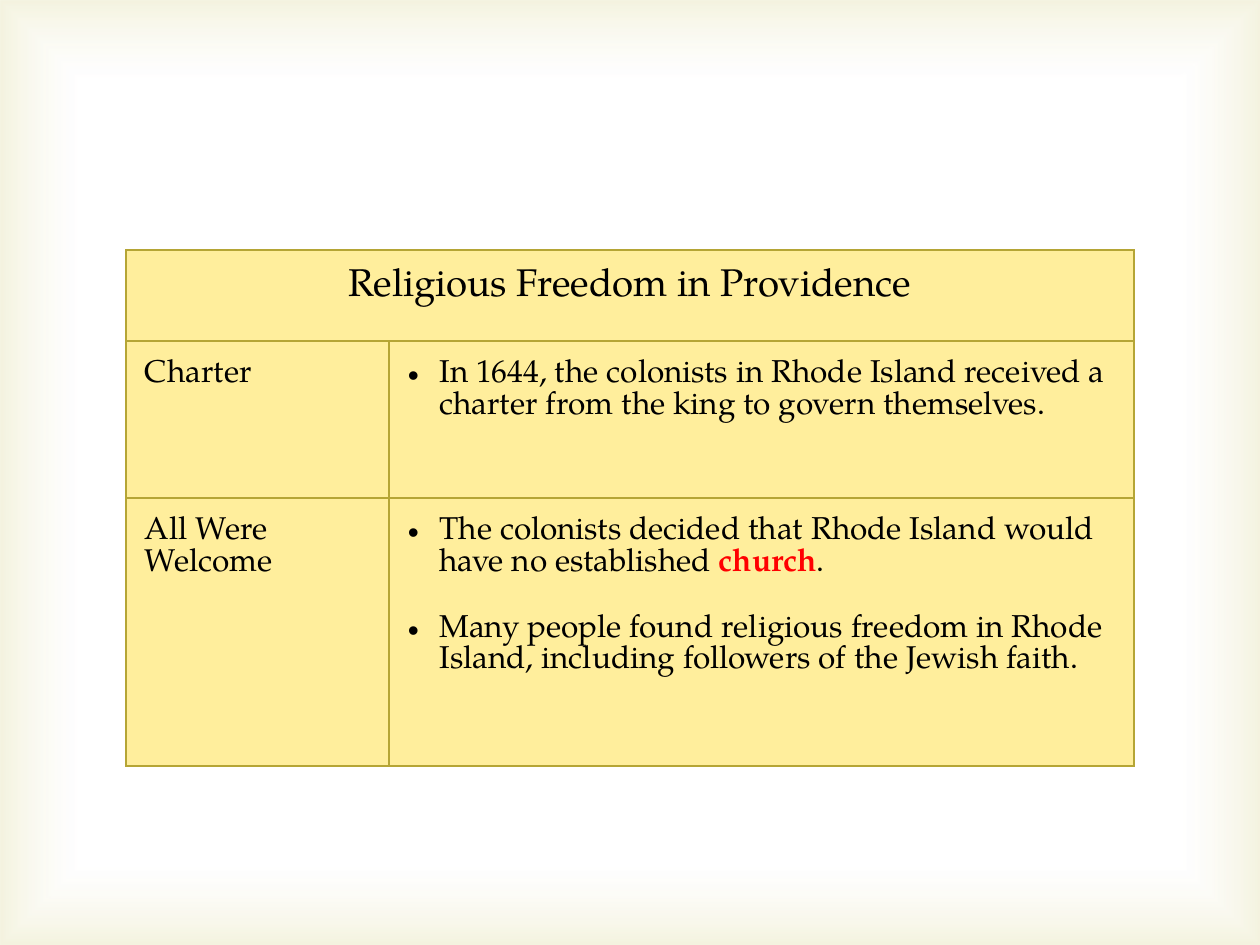
import lxml.etree
import pptx
import pptx.dml.color
import pptx.enum.shapes
import pptx.enum.text
import pptx.oxml
import pptx.oxml.ns
import pptx.util

PX = 914400 // 126
WIDTH, HEIGHT = 1260, 945
FONT = "TeX Gyre Pagella"
BLACK, RED, CREAM, GOLD = "000000", "FF0000", "FFEE9C", "B5A535"
COLUMNS = [263, 745]
ROWS = [91, 157, 268]
TITLE = "Religious Freedom in Providence"
TOPICS = [
    ("Charter", [
        ["In 1644, the colonists in Rhode Island received a charter from the king to govern themselves."],
    ]),
    ("All Were Welcome", [
        ["The colonists decided that Rhode Island would have no established ", "church", "."],
        ["Many people found religious freedom in Rhode Island, including followers of the Jewish faith."],
    ]),
]
KEYWORDS = {"church"}


def px(length):
    """Turn px into EMU."""
    return pptx.util.Emu(length * PX)


def rgb(color):
    """Turn a hex string into a colour."""
    return pptx.dml.color.RGBColor.from_string(color)


def element(markup):
    """Parse one DrawingML element."""
    head, tail = markup.split(">", 1)
    slash = "/" if head.endswith("/") else ""
    head = head.rstrip("/")
    return pptx.oxml.parse_xml(f"{head} {pptx.oxml.ns.nsdecls('a')}{slash}>{tail}")


def add_vignette(page, left, top, width, height):
    """Tint the edges of the page with a rectangular gradient."""
    box = page.shapes.add_shape(
        pptx.enum.shapes.MSO_SHAPE.RECTANGLE, px(left), px(top), px(width), px(height))
    box.shadow.inherit = False
    box.line.fill.background()
    stops = "".join(
        f'<a:gs pos="{place}000"><a:srgbClr val="{color}"><a:alpha val="{alpha}000"/></a:srgbClr></a:gs>'
        for place, color, alpha in [(83, "FFFFFF", 11), (100, "D1CA75", 23)])
    gradient = element(
        f'<a:gradFill><a:gsLst>{stops}</a:gsLst><a:path path="rect">'
        '<a:fillToRect l="50000" t="50000" r="50000" b="50000"/></a:path></a:gradFill>')
    box.element.spPr.find(pptx.oxml.ns.qn("a:prstGeom")).addnext(gradient)


def style_cell(cell):
    """Give a cell its margins, borders and fill."""
    cell.margin_left = cell.margin_right = cell.margin_top = cell.margin_bottom = px(19)
    cell.fill.solid()
    cell.fill.fore_color.rgb = rgb(CREAM)
    properties = cell._tc.get_or_add_tcPr()
    for index, side in enumerate("LRTB"):
        properties.insert(index, element(
            f'<a:ln{side} w="12700"><a:solidFill><a:srgbClr val="{GOLD}"/></a:solidFill></a:ln{side}>'))


def write_cell(cell, paragraphs, size, bullet=False, centred=False):
    """Write paragraphs, each a list of spans, into a cell."""
    for index, spans in enumerate(paragraphs):
        para = cell.text_frame.add_paragraph() if index else cell.text_frame.paragraphs[0]
        para.line_spacing = pptx.util.Pt(size)
        if centred:
            para.alignment = pptx.enum.text.PP_ALIGN.CENTER
        if index:
            para.space_before = pptx.util.Pt(size * 0.5)
        if bullet:
            para.space_after = pptx.util.Pt(size * 0.6)
            properties = para._p.get_or_add_pPr()
            properties.set("marL", "228600")
            properties.set("indent", "-228600")
            properties.append(element('<a:buFont typeface="Arial"/>'))
            properties.append(element('<a:buChar char="•"/>'))
        para.font.name = FONT
        para.font.size = pptx.util.Pt(size)
        para.font.color.rgb = rgb(BLACK)
        for text in spans:
            span = para.add_run()
            span.text = text
            if text in KEYWORDS:
                span.font.bold = True
                span.font.color.rgb = rgb(RED)


def add_freedom_table(page, left, top):
    """Place the table with a title row and one row for each topic."""
    table = page.shapes.add_table(
        len(ROWS), len(COLUMNS), px(left), px(top), px(sum(COLUMNS)), px(sum(ROWS))).table
    table.first_row = table.horz_banding = False
    for column, width in zip(table.columns, COLUMNS):
        column.width = px(width)
    for row, height in zip(table.rows, ROWS):
        row.height = px(height)
    for cell in table.iter_cells():
        style_cell(cell)
    table.cell(0, 0).merge(table.cell(0, 1))
    write_cell(table.cell(0, 0), [[TITLE]], 22, centred=True)
    for row, (topic, points) in enumerate(TOPICS, 1):
        write_cell(table.cell(row, 0), [[topic]], 18)
        write_cell(table.cell(row, 1), points, 18, bullet=True)


def main():
    """Build the deck and save it."""
    deck = pptx.Presentation()
    deck.slide_width, deck.slide_height = px(WIDTH), px(HEIGHT)
    page = deck.slides.add_slide(deck.slide_layouts[6])
    add_vignette(page, 0, 0, WIDTH, HEIGHT)
    add_freedom_table(page, 126, 250)
    deck.save("out.pptx")


if __name__ == "__main__":
    main()
